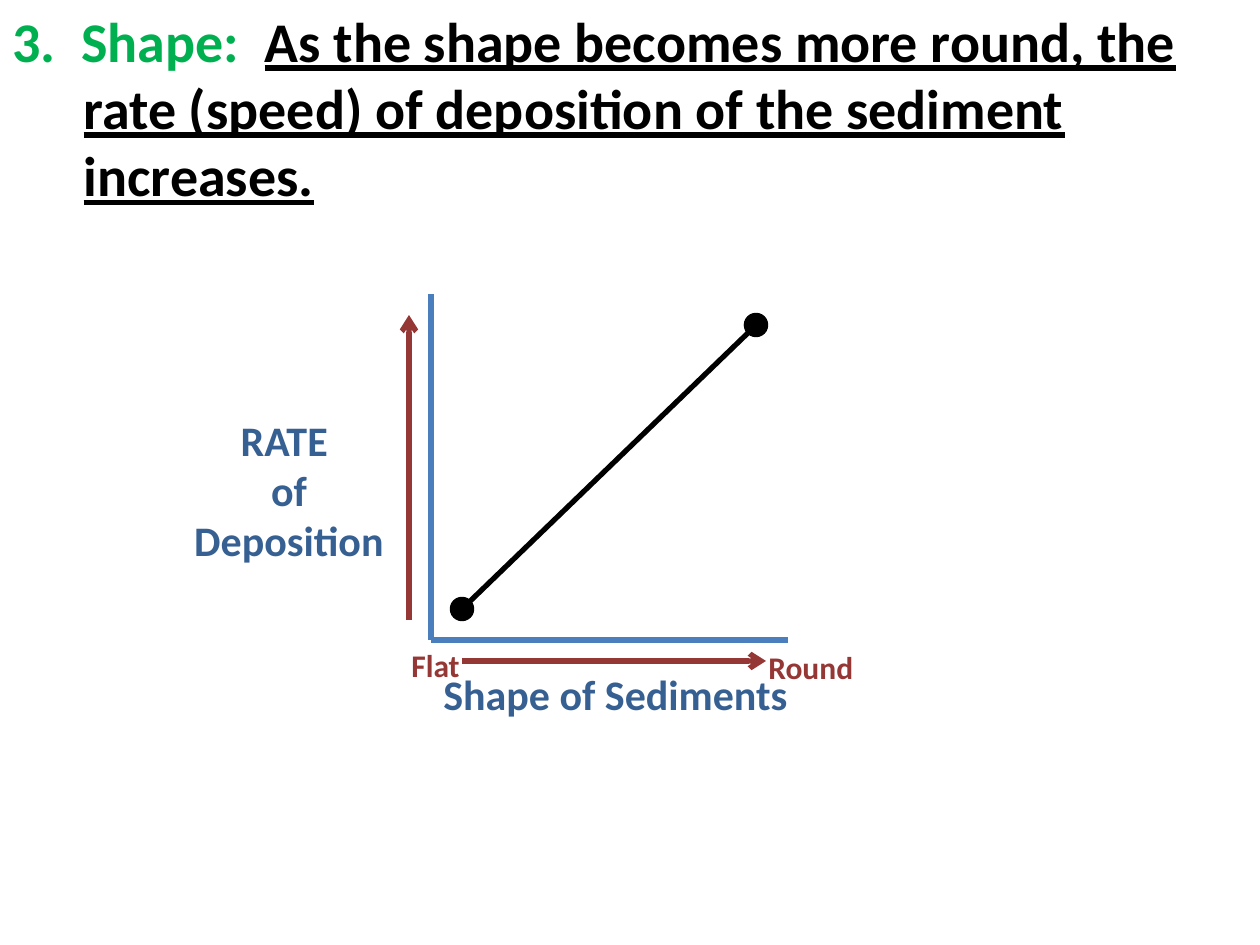
from pptx import Presentation
from pptx.dml.color import RGBColor
from pptx.enum.shapes import MSO_CONNECTOR, MSO_SHAPE
from pptx.enum.text import MSO_AUTO_SIZE, PP_ALIGN
from pptx.oxml.ns import qn
from pptx.util import Emu, Pt
from lxml.etree import SubElement

EMU_PER_PX = 914400 / 126
THEME = {
    "font": "Calibri",
    "heading": RGBColor(0x00, 0xB0, 0x50),
    "ink": RGBColor(0x00, 0x00, 0x00),
    "axis": RGBColor(0x4B, 0x7E, 0xBC),
    "axis_title": RGBColor(0x37, 0x60, 0x92),
    "trend": RGBColor(0x95, 0x37, 0x35),
    "statement_size": Pt(32),
    "title_size": Pt(24),
    "end_size": Pt(18),
    "line": Pt(3),
    "outline": Pt(2),
}


def px(*lengths):
    return [Emu(round(length * EMU_PER_PX)) for length in lengths]


def style_run(run, size, color):
    run.font.name = THEME["font"]
    run.font.size = THEME[size]
    run.font.bold = True
    run.font.color.rgb = THEME[color]


prs = Presentation()
prs.slide_width, prs.slide_height = px(1260, 945)
slide = prs.slides.add_slide(prs.slide_layouts[1])
shapes = slide.shapes

# Statement in the body placeholder, numbered by hand with a hanging indent
title = shapes.title.element
title.getparent().remove(title)
statement = slide.placeholders[1]
statement.left, statement.top, statement.width, statement.height = px(0, 0, 1260, 844)
statement.text_frame.auto_size = MSO_AUTO_SIZE.NONE
sentence = statement.text_frame.paragraphs[0]
indent = px(71)[0]
properties = sentence._p.get_or_add_pPr()
properties.set("marL", str(indent))
properties.set("indent", str(-indent))
SubElement(properties, qn("a:buNone"))
for words, color in [
    ("3.  Shape:  ", "heading"),
    ("As the shape becomes more round, the rate (speed) of deposition "
     "of the sediment increases.", "ink"),
]:
    run = sentence.add_run()
    run.text = words
    style_run(run, "statement_size", color)
    run.font.underline = color == "ink"

# Axes, direction arrows and the relationship line
for start, end, color, has_arrow in [
    ((431, 294), (431, 640), "axis", False),
    ((788, 640), (431, 640), "axis", False),
    ((462, 661), (766, 661), "trend", True),
    ((409, 620), (409, 315), "trend", True),
    ((462, 609), (748, 333), "ink", False),
]:
    connector = shapes.add_connector(MSO_CONNECTOR.STRAIGHT, *px(*start, *end))
    connector.line.color.rgb = THEME[color]
    connector.line.width = THEME["line"]
    if has_arrow:
        SubElement(connector.line._get_or_add_ln(), qn("a:tailEnd"), type="arrow")
    SubElement(connector._element.spPr, qn("a:effectLst"))

# End points of the relationship line
DOT = 21
for center_x, center_y in [(462, 609), (756, 325)]:
    dot = shapes.add_shape(
        MSO_SHAPE.OVAL, *px(center_x - DOT / 2, center_y - DOT / 2, DOT, DOT))
    dot.shadow.inherit = False
    dot.fill.solid()
    dot.fill.fore_color.rgb = THEME["ink"]
    dot.line.color.rgb = THEME["ink"]
    dot.line.width = THEME["outline"]

# Axis titles and the names of the two ends of the shape axis
for words, box, size, color, align in [
    ("Shape of Sediments", (431, 662, 441, 63), "title_size", "axis_title", PP_ALIGN.LEFT),
    ("RATE \nof\nDeposition", (168, 408, 242, 165), "title_size", "axis_title", PP_ALIGN.CENTER),
    ("Flat", (399, 640, 105, 50), "end_size", "trend", PP_ALIGN.LEFT),
    ("Round", (756, 642, 168, 50), "end_size", "trend", PP_ALIGN.LEFT),
]:
    label = shapes.add_textbox(*px(*box)).text_frame
    label.word_wrap = True
    label.auto_size = MSO_AUTO_SIZE.SHAPE_TO_FIT_TEXT
    label.text = words
    for paragraph in label.paragraphs:
        paragraph.alignment = align
        style_run(paragraph.runs[0], size, color)

prs.save("out.pptx")
